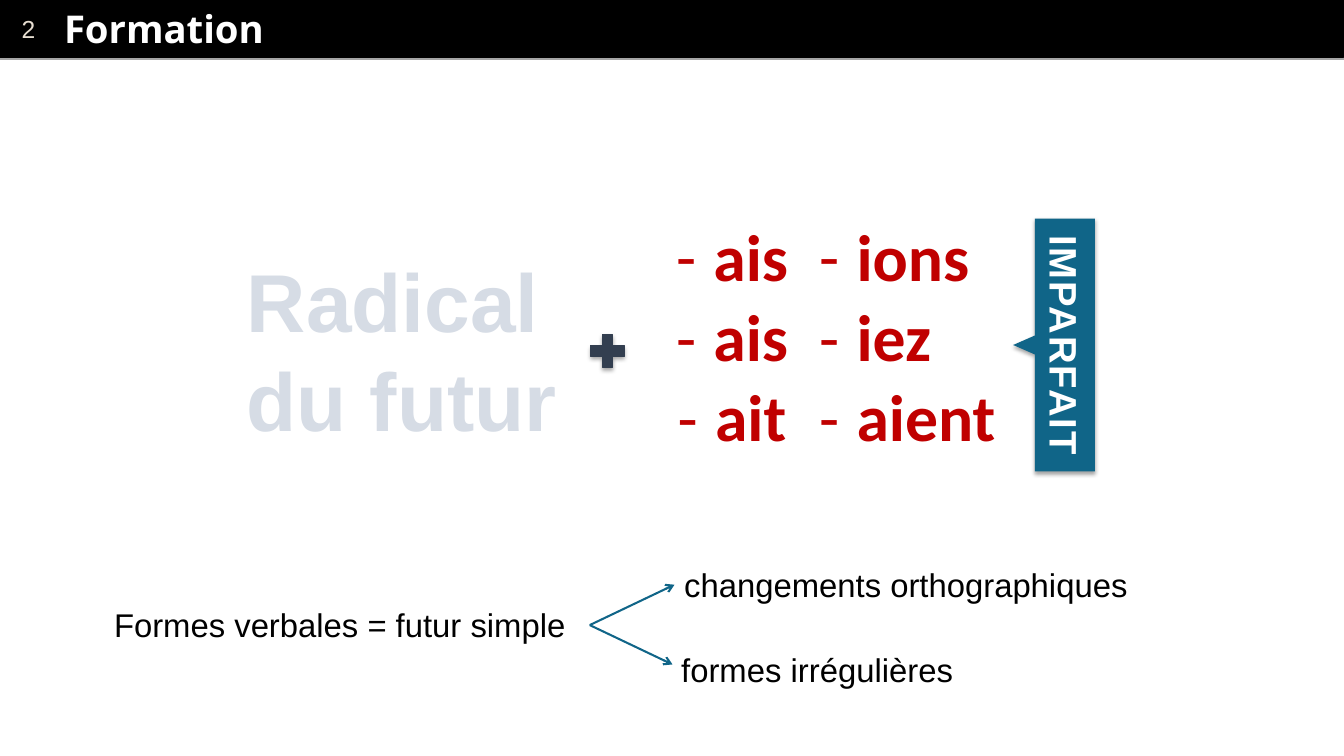
import lxml.etree
import pptx
import pptx.dml.color
import pptx.enum.dml
import pptx.enum.shapes
import pptx.enum.text
import pptx.oxml.ns
import pptx.util

Inches = pptx.util.Inches
Pt = pptx.util.Pt
qn = pptx.oxml.ns.qn
Shapes = pptx.enum.shapes.MSO_SHAPE
Align = pptx.enum.text.PP_ALIGN
Anchor = pptx.enum.text.MSO_ANCHOR

COLORS = {
    "black": "000000", "white": "FFFFFF", "number": "E7DED1", "rule": "A6A6A6",
    "slate": "44546A", "pale": "D6DCE5", "dark": "333F50",
    "red": "C00000", "teal": "106588",
}


def color(name):
    return pptx.dml.color.RGBColor.from_string(COLORS[name])


def add_xml(parent, tag, **attributes):
    child = lxml.etree.SubElement(parent, qn(tag))
    for key, value in attributes.items():
        child.set(key, str(value))
    return child


class SlideBuilder:
    """Holds the text style and the current slide, and draws its elements."""

    def __init__(self, slide, font="Arial"):
        self.slide = slide
        self.font = font

    def add_span(self, para, text, size, tint, bold=False, font=None):
        span = para.add_run()
        span.text = text
        span.font.name = font or self.font
        span.font.size = Pt(size)
        span.font.bold = bold
        span.font.color.rgb = color(tint)
        return span

    def text(self, area, lines, size, tint="black", bold=False):
        box = self.slide.shapes.add_textbox(*map(Inches, area))
        frame = box.text_frame
        frame.word_wrap = False
        frame.auto_size = pptx.enum.text.MSO_AUTO_SIZE.SHAPE_TO_FIT_TEXT
        spans = []
        for index, line in enumerate(lines):
            para = frame.add_paragraph() if index else frame.paragraphs[0]
            spans.append(self.add_span(para, line, size, tint, bold))
        return spans

    def title(self, area, text):
        box = self.slide.shapes.add_textbox(*map(Inches, area))
        frame = box.text_frame
        frame.word_wrap = True
        frame.vertical_anchor = Anchor.MIDDLE
        frame.margin_left = frame.margin_right = Inches(0.04)
        frame.margin_top = frame.margin_bottom = Inches(0.04)
        self.add_span(frame.paragraphs[0], text, 28, "white", True, "Open Sans")

    def hatch(self, span):
        fill = span.font.fill
        fill.patterned()
        fill.pattern = pptx.enum.dml.MSO_PATTERN.DARK_UPWARD_DIAGONAL
        fill.fore_color.rgb = color("slate")
        fill.back_color.rgb = color("pale")
        properties = span.font._element
        outline = add_xml(properties, "a:ln", w=Pt(1))
        solid = add_xml(outline, "a:solidFill")
        add_xml(solid, "a:srgbClr", val=COLORS["dark"])
        properties.insert(0, outline)

    def shape(self, kind, area, tint, outlined=True, shadowed=False):
        shape = self.slide.shapes.add_shape(kind, *map(Inches, area))
        shape.fill.solid()
        shape.fill.fore_color.rgb = color(tint)
        if outlined:
            shape.line.color.rgb = color(tint)
            shape.line.width = Pt(0.75)
        else:
            shape.line.fill.background()
        shape.shadow.inherit = False
        if shadowed:
            effects = shape._element.spPr.find(qn("a:effectLst"))
            shadow = add_xml(effects, "a:outerShdw", blurRad=Pt(3.1), dist=Pt(1.8),
                             dir=90 * 60000, rotWithShape=0)
            shade = add_xml(shadow, "a:srgbClr", val=COLORS["black"])
            add_xml(shade, "a:alpha", val=35000)
        shape.text_frame.vertical_anchor = Anchor.MIDDLE
        return shape

    def line(self, start, end, tint, width, arrow=False):
        line = self.slide.shapes.add_connector(
            pptx.enum.shapes.MSO_CONNECTOR.STRAIGHT, *map(Inches, start + end))
        line.line.color.rgb = color(tint)
        line.line.width = Pt(width)
        if arrow:
            add_xml(line._element.spPr.find(qn("a:ln")), "a:tailEnd", type="arrow")
        add_xml(line._element.spPr, "a:effectLst")

    def endings(self, area, widths, columns):
        frame = self.slide.shapes.add_table(1, len(columns), *map(Inches, area))
        table = frame.table
        table.first_row = table.horz_banding = False
        for index, (words, align) in enumerate(columns):
            table.columns[index].width = Inches(widths[index])
            cell = table.cell(0, index)
            cell.fill.background()
            cell.vertical_anchor = Anchor.MIDDLE
            cell.margin_left = cell.margin_right = Inches(0.07)
            cell.margin_top = cell.margin_bottom = 0
            for row, word in enumerate(words):
                body = cell.text_frame
                para = body.add_paragraph() if row else body.paragraphs[0]
                para.alignment = align
                self.dash(para)
                self.add_span(para, word, 48, "red", True, "Calibri")

    def dash(self, para):
        properties = para._p.get_or_add_pPr()
        properties.set("marL", str(Inches(0.38)))
        properties.set("indent", str(Inches(-0.38)))
        add_xml(properties, "a:buFont", typeface="Calibri")
        add_xml(properties, "a:buChar", char="-")
        tabs = add_xml(properties, "a:tabLst")
        add_xml(tabs, "a:tab", pos=Inches(0.5), algn="l")


def main():
    deck = pptx.Presentation()
    deck.slide_width, deck.slide_height = Inches(13.65), Inches(7.68)
    page = SlideBuilder(deck.slides.add_slide(deck.slide_layouts[6]))

    header = page.shape(Shapes.RECTANGLE, (0, 0, 13.65, 0.58), "black")
    para = header.text_frame.paragraphs[0]
    para.alignment = Align.LEFT
    para._p.get_or_add_pPr().set("marL", str(Inches(0.12)))
    page.add_span(para, "2", 18, "number")
    page.line((0, 0.6), (13.65, 0.6), "rule", 2)
    page.title((0.61, 0.01, 12.85, 0.56), "Formation")

    for span in page.text((2.41, 2.5, 3.43, 2.12), ["Radical", "du futur"], 60, "pale", True):
        page.hatch(span)
    page.shape(Shapes.MATH_PLUS, (5.94, 3.34, 0.46, 0.45), "dark", shadowed=True)
    page.endings((6.62, 2.22, 3.83, 2.4), (1.63, 2.2), [
        (["ais", "ais", "ait"], Align.CENTER),
        (["ions", "iez", "aient"], Align.LEFT),
    ])

    tense = page.shape(Shapes.LEFT_ARROW_CALLOUT, (10.29, 2.22, 0.83, 2.57), "teal",
                       outlined=False, shadowed=True)
    for index, value in enumerate((0.154, 0.116, 0.266, 0.756)):
        tense.adjustments[index] = value
    tense.text_frame._txBody.bodyPr.set("vert", "vert")
    para = tense.text_frame.paragraphs[0]
    para.alignment = Align.CENTER
    span = page.add_span(para, "IMPARFAIT", 28, "white", True)
    span.font._element.set("spc", "150")

    page.text((1.06, 6.09, 4.93, 0.5), ["Formes verbales = futur simple"], 24)
    page.text((6.85, 5.69, 4.85, 0.5), ["changements orthographiques"], 24)
    page.text((6.82, 6.55, 2.99, 0.5), ["formes irrégulières"], 24)
    for tip in ((6.85, 5.94), (6.83, 6.75)):
        page.line((5.99, 6.35), tip, "teal", 1.5, arrow=True)

    deck.save("out.pptx")


if __name__ == "__main__":
    main()
